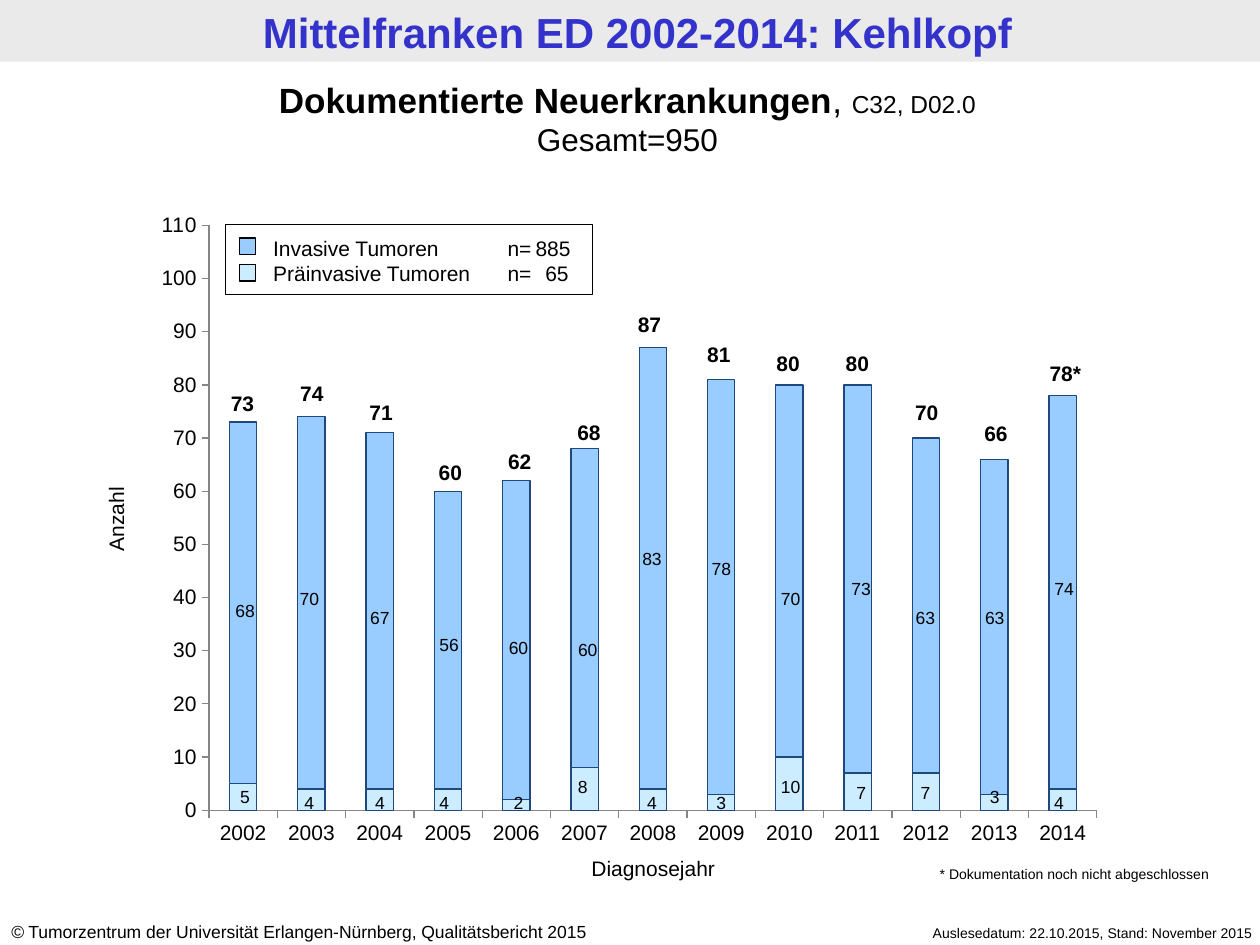
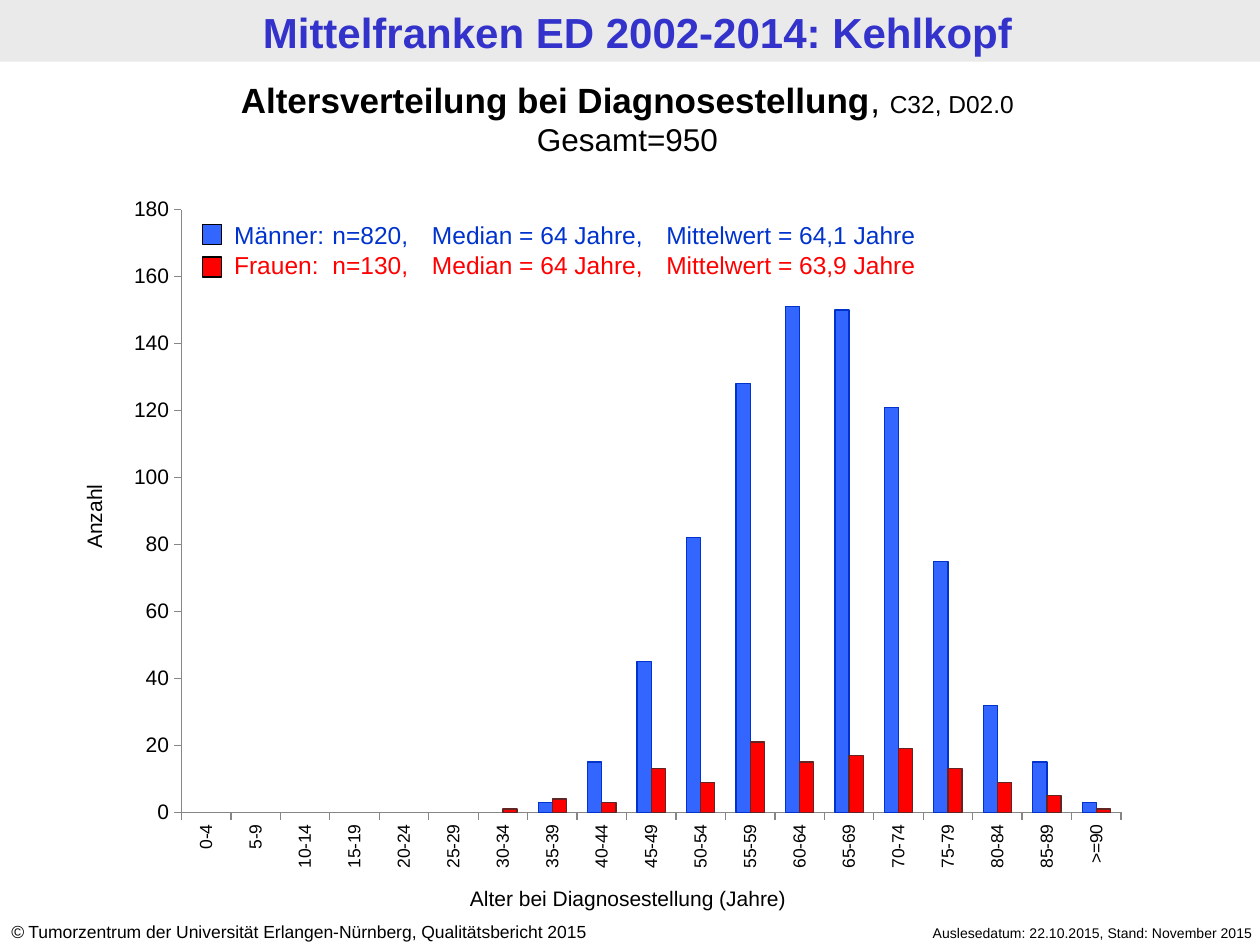
from dataclasses import dataclass
from typing import NamedTuple

from lxml.etree import SubElement
from pptx import Presentation
from pptx.chart.data import CategoryChartData
from pptx.dml.color import RGBColor
from pptx.enum.chart import XL_CHART_TYPE, XL_TICK_MARK
from pptx.enum.shapes import MSO_SHAPE
from pptx.enum.text import MSO_ANCHOR, MSO_AUTO_SIZE, PP_ALIGN
from pptx.oxml.ns import qn
from pptx.util import Inches, Pt

FONT = "Arial"
BLACK = "000000"
BAND_GREY = "EAEAEA"
TITLE_BLUE = "3333CC"
AXIS_GREY = "868686"
WHITE = "FFFFFF"
INVASIVE_BLUE = "99CCFF"
PREINVASIVE_BLUE = "CCECFF"
STACK_OUTLINE = "1F497D"
MEN_FILL = "3366FF"
MEN_TEXT = "0033CC"
WOMEN_RED = "FF0000"
WOMEN_OUTLINE = "632523"

LEFT, CENTER, RIGHT = PP_ALIGN.LEFT, PP_ALIGN.CENTER, PP_ALIGN.RIGHT


class Frame(NamedTuple):
    left: float
    top: float
    width: float
    height: float


class Span(NamedTuple):
    text: str
    size: float
    bold: bool = False
    italic: bool = False
    color: str = BLACK


@dataclass
class Para:
    spans: list[Span]
    align: PP_ALIGN = LEFT
    tabs: tuple[tuple[float, str], ...] = ()


@dataclass
class Series:
    name: str
    values: list[int | None]
    fill: str
    outline: str


@dataclass
class ColumnChart:
    kind: XL_CHART_TYPE
    frame: Frame
    plot: Frame
    categories: list[str]
    series: list[Series]
    maximum: int
    step: int
    overlap: int
    category_size: float
    vertical_categories: bool = False
    plot_fill: str | None = None


class YearBar(NamedTuple):
    year: str
    preinvasive: int
    invasive: int
    total_top: float
    invasive_left: float
    invasive_top: float
    preinvasive_left: float
    preinvasive_top: float
    mark: str = ""


class AgeGroup(NamedTuple):
    label: str
    men: int | None
    women: int | None


YEARS = [
    YearBar("2002", 5, 68, 3.05, 1.73, 4.71, 1.73, 6.19),
    YearBar("2003", 4, 70, 2.97, 2.24, 4.62, 2.24, 6.24),
    YearBar("2004", 4, 67, 3.12, 2.80, 4.77, 2.80, 6.24),
    YearBar("2005", 4, 56, 3.60, 3.35, 4.98, 3.31, 6.24),
    YearBar("2006", 2, 60, 3.51, 3.90, 5.01, 3.90, 6.24),
    YearBar("2007", 8, 60, 3.28, 4.45, 5.02, 4.41, 6.11),
    YearBar("2008", 4, 83, 2.42, 4.96, 4.30, 4.96, 6.24),
    YearBar("2009", 3, 78, 2.66, 5.51, 4.38, 5.51, 6.24),
    YearBar("2010", 10, 70, 2.73, 6.06, 4.62, 6.06, 6.11),
    YearBar("2011", 7, 73, 2.73, 6.62, 4.54, 6.62, 6.16),
    YearBar("2012", 7, 63, 3.12, 7.13, 4.77, 7.13, 6.16),
    YearBar("2013", 3, 63, 3.29, 7.68, 4.77, 7.68, 6.19),
    YearBar("2014", 4, 74, 2.81, 8.23, 4.54, 8.19, 6.24, "*"),
]

MEN = [None] * 7 + [3, 15, 45, 82, 128, 151, 150, 121, 75, 32, 15, 3]
WOMEN = [None] * 6 + [1, 4, 3, 13, 9, 21, 15, 17, 19, 13, 9, 5, 1]
AGE_LABELS = [f"{age}-{age + 4}" for age in range(0, 90, 5)] + [">=90"]
AGES = [AgeGroup(*row) for row in zip(AGE_LABELS, MEN, WOMEN)]


def rgb(value: str) -> RGBColor:
    return RGBColor.from_string(value)


def inches(frame: Frame) -> list[Inches]:
    return [Inches(value) for value in frame]


def write(text_frame, paras: list[Para]) -> None:
    text_frame.word_wrap = True
    text_frame.auto_size = MSO_AUTO_SIZE.NONE
    text_frame.vertical_anchor = MSO_ANCHOR.TOP
    for index, para in enumerate(paras):
        paragraph = text_frame.add_paragraph() if index else text_frame.paragraphs[0]
        paragraph.alignment = para.align
        if para.tabs:
            tab_list = SubElement(paragraph._p.get_or_add_pPr(), qn("a:tabLst"))
            for position, side in para.tabs:
                SubElement(tab_list, qn("a:tab"), pos=str(Inches(position)), algn=side)
        for span in para.spans:
            run = paragraph.add_run()
            run.text = span.text
            run.font.name = FONT
            run.font.size = Pt(span.size)
            run.font.bold = span.bold
            run.font.italic = span.italic
            run.font.color.rgb = rgb(span.color)


def add_text(page, frame: Frame, paras: list[Para], rotation: float = 0):
    box = page.shapes.add_textbox(*inches(frame))
    box.rotation = rotation
    write(box.text_frame, paras)
    return box


def add_label(page, frame: Frame, text: str, size: float,
              bold: bool = False, rotation: float = 0) -> None:
    add_text(page, frame, [Para([Span(text, size, bold)], CENTER)], rotation)


def add_box(page, frame: Frame, fill: str | None, line: str | None = BLACK) -> None:
    box = page.shapes.add_shape(MSO_SHAPE.RECTANGLE, *inches(frame))
    box.shadow.inherit = False
    if fill:
        box.fill.solid()
        box.fill.fore_color.rgb = rgb(fill)
    else:
        box.fill.background()
    if line:
        box.line.color.rgb = rgb(line)
        box.line.width = Pt(0.75)
    else:
        box.line.fill.background()


def add_page(deck, heading: str):
    page = deck.slides.add_slide(deck.slide_layouts[5])
    add_box(page, Frame(0, 0, 10, 0.49), BAND_GREY, None)
    band = add_text(page, Frame(0.06, 0.01, 10, 0.49), [
        Para([Span("Mittelfranken ED 2002-2014: Kehlkopf", 24, True, color=TITLE_BLUE)], CENTER)])
    band.text_frame.margin_top = band.text_frame.margin_bottom = Inches(0.04)
    add_text(page, Frame(6.65, 7.29, 3.39, 0.24), [
        Para([Span("Auslesedatum: 22.10.2015, Stand: November 2015", 8)], RIGHT)])
    add_text(page, Frame(-0.01, 7.26, 5.24, 0.27), [Para([
        Span("©", 10, italic=True),
        Span(" Tumorzentrum der Universität Erlangen-Nürnberg, Qualitätsbericht 2015", 10)])])
    title = page.shapes.title
    title.left, title.top, title.width, title.height = inches(Frame(-0.04, 0.57, 10.04, 0.74))
    write(title.text_frame, [
        Para([Span(heading, 20, True), Span(", ", 20), Span("C32, D02.0", 14)], CENTER),
        Para([Span("Gesamt=950", 18)], CENTER)])
    return page


def style_axis(axis, size: float) -> None:
    axis.has_major_gridlines = False
    axis.major_tick_mark = XL_TICK_MARK.OUTSIDE
    axis.minor_tick_mark = XL_TICK_MARK.NONE
    axis.format.line.color.rgb = rgb(AXIS_GREY)
    axis.format.line.width = Pt(0.75)
    font = axis.tick_labels.font
    font.name = FONT
    font.size = Pt(size)
    font.color.rgb = rgb(BLACK)


def place_plot(chart, plot: Frame) -> None:
    plot_area = chart._chartSpace.chart.plotArea
    for old_layout in plot_area.findall(qn("c:layout")):
        plot_area.remove(old_layout)
    layout = plot_area.makeelement(qn("c:layout"))
    plot_area.insert(0, layout)
    manual = SubElement(layout, qn("c:manualLayout"))
    settings = [("layoutTarget", "inner"), ("xMode", "edge"), ("yMode", "edge")]
    settings += zip("xywh", plot)
    for tag, value in settings:
        SubElement(manual, qn(f"c:{tag}"), val=str(value))


def fill_plot(chart, color: str) -> None:
    properties = SubElement(chart._chartSpace.chart.plotArea, qn("c:spPr"))
    SubElement(SubElement(properties, qn("a:solidFill")), qn("a:srgbClr"), val=color)


def add_columns(page, columns: ColumnChart) -> None:
    data = CategoryChartData()
    data.categories = columns.categories
    for series in columns.series:
        data.add_series(series.name, series.values)
    chart = page.shapes.add_chart(columns.kind, *inches(columns.frame), data).chart
    chart.has_legend = False
    chart.has_title = False
    chart.font.name = FONT
    chart.font.size = Pt(12)
    chart.font.color.rgb = rgb(BLACK)
    place_plot(chart, columns.plot)
    if columns.plot_fill:
        fill_plot(chart, columns.plot_fill)
    plot = chart.plots[0]
    plot.vary_by_categories = False
    plot.gap_width = 150
    plot.overlap = columns.overlap
    style_axis(chart.category_axis, columns.category_size)
    style_axis(chart.value_axis, 12)
    chart.value_axis.minimum_scale = 0
    chart.value_axis.maximum_scale = columns.maximum
    chart.value_axis.major_unit = columns.step
    if columns.vertical_categories:
        body = chart.category_axis._element.find(qn("c:txPr")).find(qn("a:bodyPr"))
        body.set("rot", "-5400000")
        body.set("vert", "horz")
    for drawn, series in zip(plot.series, columns.series):
        drawn.format.fill.solid()
        drawn.format.fill.fore_color.rgb = rgb(series.fill)
        drawn.format.line.color.rgb = rgb(series.outline)
        drawn.format.line.width = Pt(0.75)


def build_new_cases(deck) -> None:
    page = add_page(deck, "Dokumentierte Neuerkrankungen")
    add_columns(page, ColumnChart(
        XL_CHART_TYPE.COLUMN_STACKED, Frame(1.15, 1.64, 7.71, 5.14),
        Frame(0.066, 0.029, 0.914, 0.903), [bar.year for bar in YEARS],
        [Series("Präinvasive Tumoren", [bar.preinvasive for bar in YEARS],
                PREINVASIVE_BLUE, STACK_OUTLINE),
         Series("Invasive Tumoren", [bar.invasive for bar in YEARS],
                INVASIVE_BLUE, STACK_OUTLINE)],
        maximum=110, step=10, overlap=100, category_size=12))
    add_label(page, Frame(4.06, 6.74, 2.25, 0.3), "Diagnosejahr", 12)
    add_label(page, Frame(0.31, 3.97, 1.22, 0.3), "Anzahl", 12, rotation=270)
    add_box(page, Frame(1.79, 1.78, 2.91, 0.56), None)
    add_text(page, Frame(2.07, 1.82, 2.86, 0.5), [
        Para([Span("Invasive Tumoren\t\tn=\t885", 12)],
             tabs=((1.47, "l"), (1.86, "l"), (2.36, "r"))),
        Para([Span("Präinvasive Tumoren\tn=\t65", 12)],
             tabs=((1.47, "l"), (1.86, "l"), (2.16, "l")))])
    for row, fill in enumerate((INVASIVE_BLUE, PREINVASIVE_BLUE)):
        add_box(page, Frame(1.9, 1.89 + 0.21 * row, 0.13, 0.13), fill)
    for index, bar in enumerate(YEARS):
        total_left = (1.61 if index < 6 else 1.54) + 0.55 * index
        total = f"{bar.invasive + bar.preinvasive}{bar.mark}"
        add_label(page, Frame(total_left, bar.total_top, 0.63, 0.3), total, 12, bold=True)
        for left, top, count in ((bar.invasive_left, bar.invasive_top, bar.invasive),
                                 (bar.preinvasive_left, bar.preinvasive_top, bar.preinvasive)):
            add_label(page, Frame(left, top, 0.43, 0.27), str(count), 10)
    add_text(page, Frame(7.36, 6.82, 2.7, 0.24), [
        Para([Span("* Dokumentation noch nicht abgeschlossen", 8)])])


def build_age_distribution(deck) -> None:
    page = add_page(deck, "Altersverteilung bei Diagnosestellung")
    add_columns(page, ColumnChart(
        XL_CHART_TYPE.COLUMN_CLUSTERED, Frame(0.91, 1.47, 8.16, 5.55),
        Frame(0.065, 0.035, 0.914, 0.862), [group.label for group in AGES],
        [Series("Männer", [group.men for group in AGES], MEN_FILL, MEN_TEXT),
         Series("Frauen", [group.women for group in AGES], WOMEN_RED, WOMEN_OUTLINE)],
        maximum=180, step=20, overlap=0, category_size=10,
        vertical_categories=True, plot_fill=WHITE))
    tabs = ((0.78, "l"), (0.88, "l"), (1.57, "l"), (3.43, "l"))
    add_text(page, Frame(1.76, 1.7, 6.85, 0.57), [
        Para([Span(text, 14, color=color)], tabs=tabs) for text, color in (
            ("Männer: \tn=820, \tMedian = 64 Jahre, \tMittelwert = 64,1 Jahre", MEN_TEXT),
            ("Frauen: \tn=130, \tMedian = 64 Jahre,\tMittelwert = 63,9 Jahre", WOMEN_RED))])
    for row, fill in enumerate((MEN_FILL, WOMEN_RED)):
        add_box(page, Frame(1.61, 1.78 + 0.26 * row, 0.15, 0.16), fill)
    add_label(page, Frame(3.45, 6.98, 3.07, 0.3), "Alter bei Diagnosestellung (Jahre)", 12)
    add_label(page, Frame(-0.56, 3.95, 2.61, 0.3), "Anzahl", 12, rotation=270)


def main() -> None:
    deck = Presentation()
    deck.slide_width, deck.slide_height = Inches(10), Inches(7.5)
    build_new_cases(deck)
    build_age_distribution(deck)
    deck.save("out.pptx")


if __name__ == "__main__":
    main()
